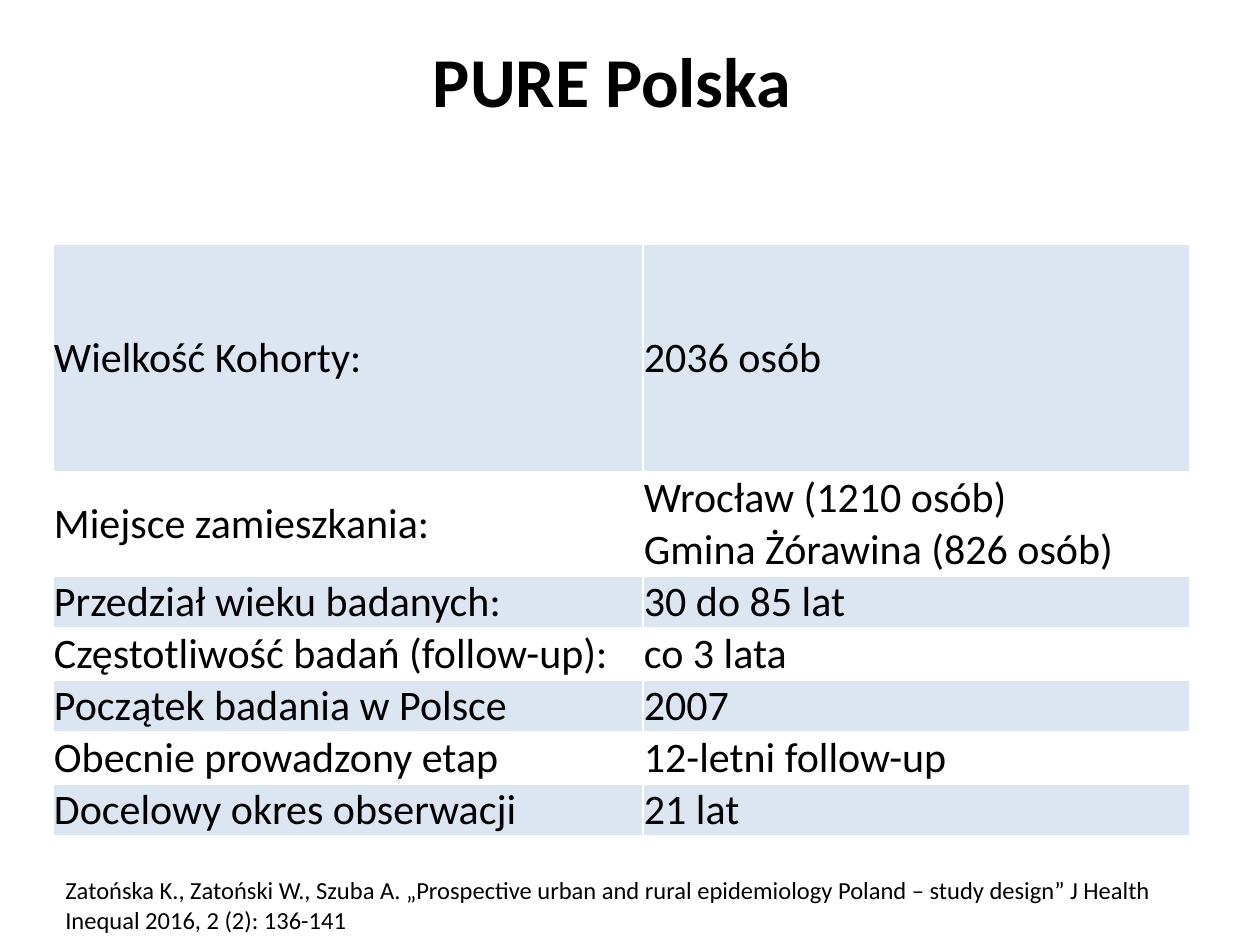
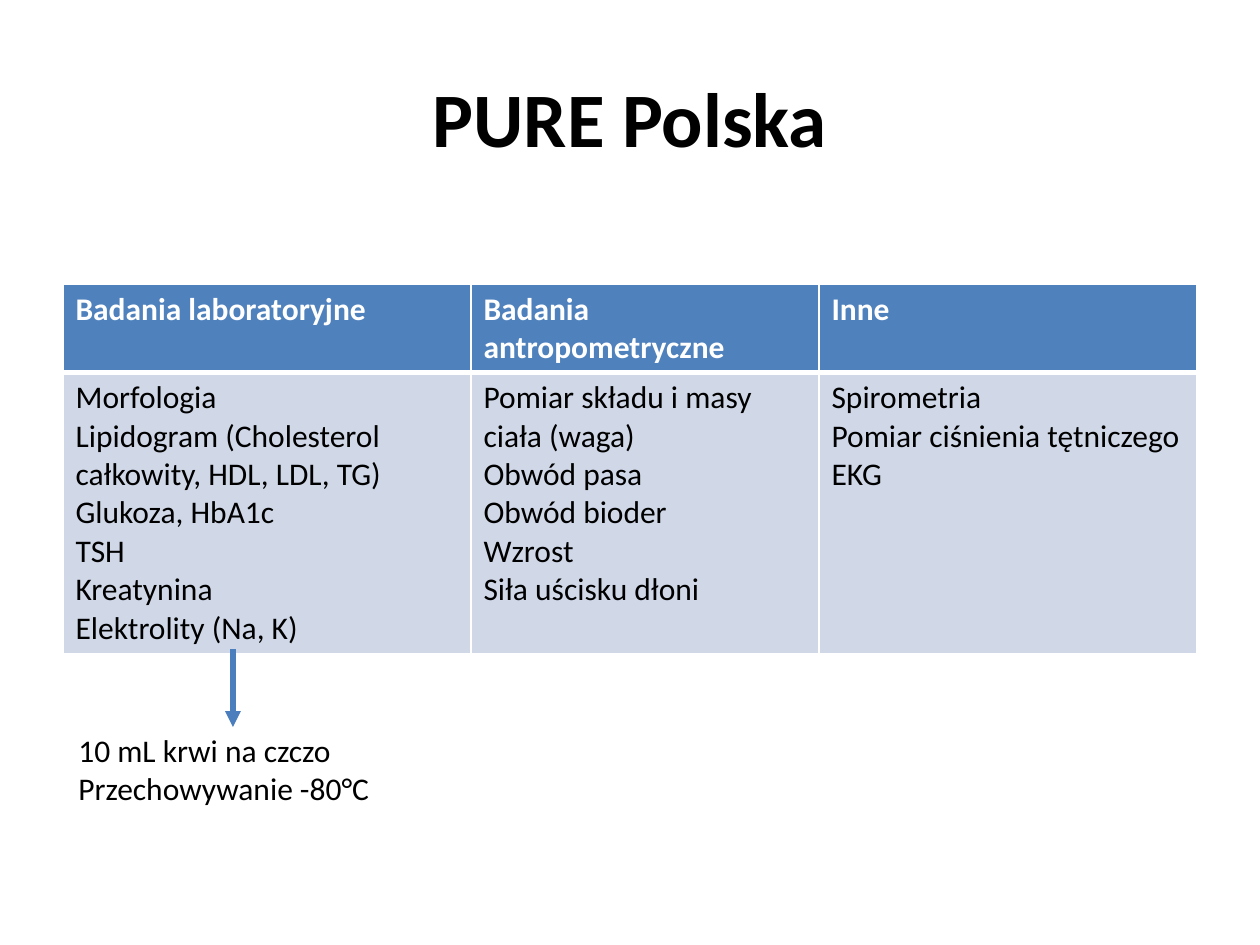
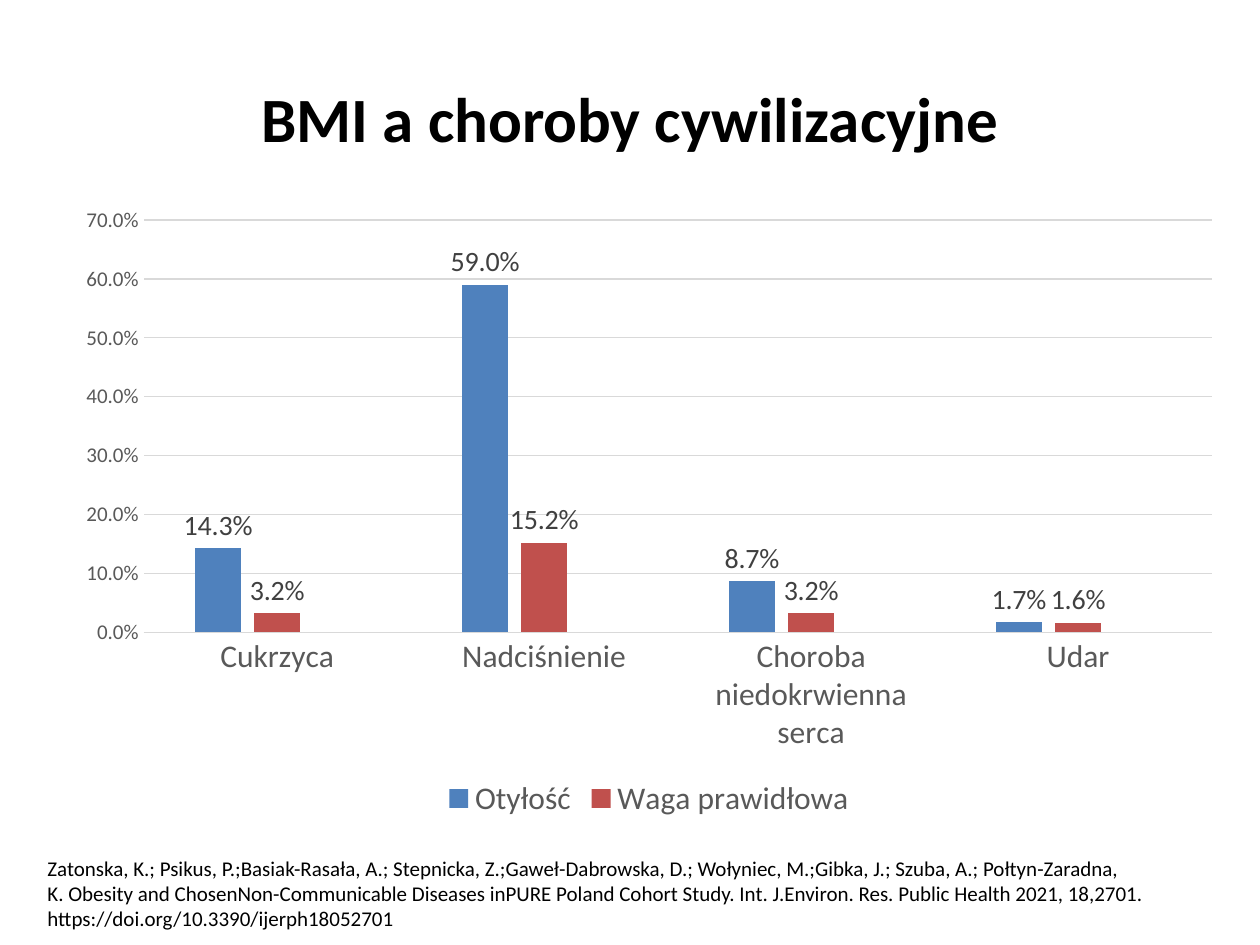
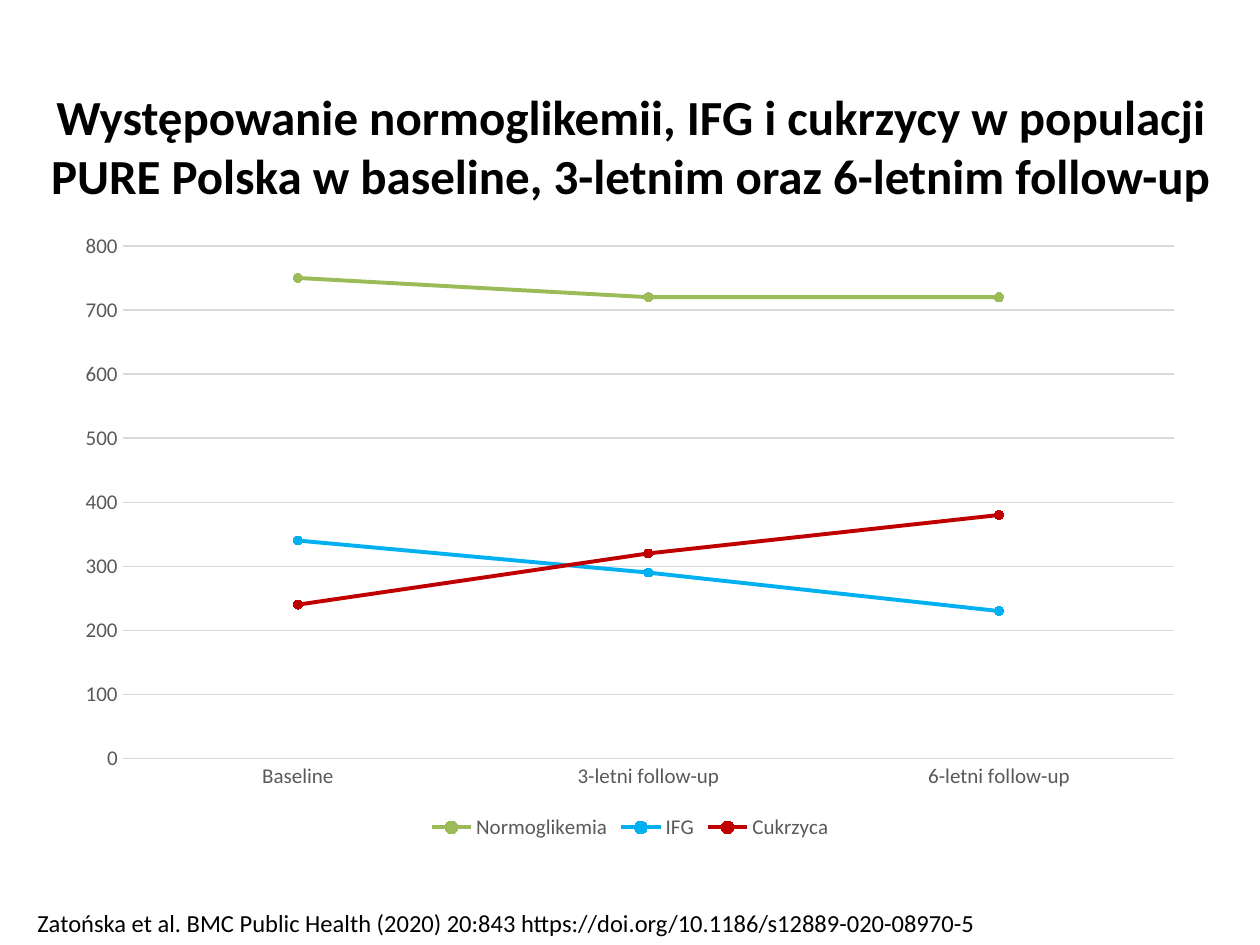
import lxml.etree
import pptx
import pptx.chart.data
import pptx.dml.color
import pptx.enum.chart
import pptx.enum.shapes
import pptx.enum.text
import pptx.oxml.ns
import pptx.util

FONT = "Calibri"
SLIDE_W, SLIDE_H = 1260, 945
C = {
    "text": "000000", "white": "FFFFFF", "band": "DCE6F2", "body": "D0D8E8",
    "blue": "4F81BD", "red": "C0504D", "green": "9BBB59", "arrow": "4B7EBC",
    "sky": "00B0F0", "crimson": "C00000",
    "axis": "595959", "label": "404040", "grid": "D9D9D9",
}
ALIGN = pptx.enum.text.PP_ALIGN
ANCHOR = pptx.enum.text.MSO_ANCHOR
CHART = pptx.enum.chart
SUB = lxml.etree.SubElement
qn = pptx.oxml.ns.qn


def px(n):
    return pptx.util.Emu(round(n * 914400 / 126))


def rgb(name):
    return pptx.dml.color.RGBColor.from_string(C[name])


def style_font(font, size, color, bold=False):
    font.name = FONT
    font.size = pptx.util.Pt(size)
    font.bold = bold
    font.color.rgb = rgb(color)


def write(tf, text, size=18, color="text", bold=False, align=ALIGN.LEFT):
    """Fill a text frame with one paragraph for each line of text."""
    for i, line in enumerate(text.split("\n")):
        p = tf.add_paragraph() if i else tf.paragraphs[0]
        p.alignment = align
        r = p.add_run()
        r.text = line
        style_font(r.font, size, color, bold)


def add_text(s, box, text, anchor=ANCHOR.TOP, grow=True, **fmt):
    tf = s.shapes.add_textbox(*map(px, box)).text_frame
    tf.word_wrap = True
    tf.vertical_anchor = anchor
    if grow:
        tf.auto_size = pptx.enum.text.MSO_AUTO_SIZE.SHAPE_TO_FIT_TEXT
    write(tf, text, **fmt)


def add_title(s, text, size, left=63, top=38, width=1134):
    add_text(s, (left, top, width, 158), text, anchor=ANCHOR.MIDDLE, grow=False,
             size=size, bold=True, align=ALIGN.CENTER)


def add_table(s, left, top, cols, rows):
    """Add an unstyled table with the given column widths and row heights."""
    tbl = s.shapes.add_table(len(rows), len(cols), px(left), px(top),
                             px(sum(cols)), px(sum(rows))).table
    tbl.first_row = tbl.horz_banding = False
    for col, width in zip(tbl.columns, cols):
        col.width = px(width)
    for row, height in zip(tbl.rows, rows):
        row.height = px(height)
    return tbl


def fill_cell(cell, text, fill, top=1, bottom=1, **fmt):
    """Write a cell with white borders; top and bottom are border points."""
    tc_pr = cell._tc.get_or_add_tcPr()
    for side, pt in zip("LRTB", (1, 1, top, bottom)):
        ln = SUB(tc_pr, qn(f"a:ln{side}"), w=str(pptx.util.Pt(pt)))
        SUB(SUB(ln, qn("a:solidFill")), qn("a:srgbClr"), val=C["white"])
    cell.fill.solid()
    cell.fill.fore_color.rgb = rgb(fill)
    write(cell.text_frame, text, **fmt)


def add_arrow(s, x1, y1, x2, y2):
    ends = map(px, (x1, y1, x2, y2))
    sp = s.shapes.add_connector(pptx.enum.shapes.MSO_CONNECTOR.STRAIGHT, *ends)
    sp.line.color.rgb = rgb("arrow")
    sp.line.width = pptx.util.Pt(3)
    SUB(sp.line._get_or_add_ln(), qn("a:tailEnd"), type="triangle")
    SUB(sp._element.spPr, qn("a:effectLst"))


def grey_line(line):
    line.color.rgb = rgb("grid")
    line.width = pptx.util.Pt(0.75)


def add_chart(s, kind, box, cats, series, top, step, cat_size, number_format="General"):
    data = pptx.chart.data.CategoryChartData(number_format=number_format)
    data.categories = cats
    for name, values in series:
        data.add_series(name, values)
    chart = s.shapes.add_chart(kind, *map(px, box), data).chart
    style_font(chart.font, 10, "text")
    chart.has_title = False
    chart.plots[0].vary_by_categories = False

    chart.has_legend = True
    chart.legend.position = CHART.XL_LEGEND_POSITION.BOTTOM
    chart.legend.include_in_layout = False
    style_font(chart.legend.font, cat_size, "axis")

    cat, val = chart.category_axis, chart.value_axis
    for axis, size in ((cat, cat_size), (val, 12)):
        axis.major_tick_mark = axis.minor_tick_mark = CHART.XL_TICK_MARK.NONE
        style_font(axis.tick_labels.font, size, "axis")
    grey_line(cat.format.line)
    val.format.line.fill.background()
    val.has_major_gridlines = True
    grey_line(val.major_gridlines.format.line)
    val.minimum_scale, val.maximum_scale, val.major_unit = 0, top, step
    val.tick_labels.number_format = number_format
    val.tick_labels.number_format_is_linked = False
    return chart


def hide_legend_entry(chart, idx):
    entry = lxml.etree.Element(qn("c:legendEntry"))
    SUB(entry, qn("c:idx"), val=str(idx))
    SUB(entry, qn("c:delete"), val="1")
    chart.legend._element.find(qn("c:legendPos")).addnext(entry)


def cohort_slide(s):
    add_title(s, "PURE Polska ", 40, left=53, top=0)
    rows = [
        ("Wielkość Kohorty:", "2036 osób", "band"),
        ("Miejsce zamieszkania:", "Wrocław (1210 osób)", "white"),
        ("", "Gmina Żórawina (826 osób)", "white"),
        ("Przedział wieku badanych:", "30 do 85 lat", "band"),
        ("Częstotliwość badań (follow-up):", "co 3 lata", "white"),
        ("Początek badania w Polsce", "2007", "band"),
        ("Obecnie prowadzony etap", "12-letni follow-up", "white"),
        ("Docelowy okres obserwacji", "21 lat", "band"),
    ]
    tbl = add_table(s, 53, 244, (590, 547), [228] + [52] * (len(rows) - 1))
    tbl.cell(1, 0).merge(tbl.cell(2, 0))
    for i, (*texts, fill) in enumerate(rows):
        for j, text in enumerate(texts):
            cell = tbl.cell(i, j)
            cell.margin_left = cell.margin_right = cell.margin_top = px(1)
            cell.margin_bottom = 0
            cell.vertical_anchor = ANCHOR.MIDDLE
            if not cell.is_spanned:
                fill_cell(cell, text, fill, size=24)
    add_text(s, (53, 869, 1172, 111),
             "Zatońska K., Zatoński W., Szuba A. „Prospective urban and rural "
             "epidemiology Poland – study design” J Health Inequal 2016, 2 (2): 136-141",
             size=14)


def examinations_slide(s):
    add_title(s, "PURE Polska", 44)
    columns = [
        ("Badania laboratoryjne",
         "Morfologia\nLipidogram (Cholesterol całkowity, HDL, LDL, TG)\n"
         "Glukoza, HbA1c\nTSH\nKreatynina\nElektrolity (Na, K)"),
        ("Badania antropometryczne",
         "Pomiar składu i masy ciała (waga)\nObwód pasa\nObwód bioder\n"
         "Wzrost\nSiła uścisku dłoni"),
        ("Inne", "Spirometria\nPomiar ciśnienia tętniczego\nEKG"),
    ]
    tbl = add_table(s, 63, 284, (408, 348, 378), (88, 282))
    for j, (head, body) in enumerate(columns):
        fill_cell(tbl.cell(0, j), head, "blue", bottom=3, color="white", bold=True)
        fill_cell(tbl.cell(1, j), body, "body", top=3)
    add_arrow(s, 233, 649, 233, 727)
    add_text(s, (66, 725, 378, 127), "10 mL krwi na czczo\nPrzechowywanie -80°C")


def bmi_slide(s):
    add_title(s, "BMI a choroby cywilizacyjne", 36)
    cats = ["Cukrzyca", "Nadciśnienie", "Choroba niedokrwienna serca", "Udar"]
    series = [
        ("Otyłość", (0.143, 0.59, 0.087, 0.017)),
        ("Waga prawidłowa", (0.032, 0.152, 0.032, 0.016)),
        ("Series 3", (None,) * len(cats)),
    ]
    chart = add_chart(s, CHART.XL_CHART_TYPE.COLUMN_CLUSTERED, (63, 195, 1172, 629),
                      cats, series, 0.7, 0.1, 18, "0.0%")
    hide_legend_entry(chart, 2)
    plot = chart.plots[0]
    plot.gap_width, plot.overlap = 219, -27
    for bars, color in zip(plot.series, ("blue", "red", "green")):
        bars.format.fill.solid()
        bars.format.fill.fore_color.rgb = rgb(color)
        labels = bars.data_labels
        labels.show_value = True
        labels.position = CHART.XL_LABEL_POSITION.OUTSIDE_END
        labels.number_format = "0.0%"
        labels.number_format_is_linked = False
        style_font(labels.font, 16, "label")
    add_text(s, (35, 849, 1191, 89),
             "Zatonska, K.; Psikus, P.;Basiak-Rasała, A.; Stepnicka, Z.;Gaweł-Dabrowska, D.; "
             "Wołyniec, M.;Gibka, J.; Szuba, A.; Połtyn-Zaradna,\n"
             "K. Obesity and ChosenNon-Communicable Diseases inPURE Poland Cohort Study. "
             "Int. J.Environ. Res. Public Health 2021, 18,2701. "
             "https://doi.org/10.3390/ijerph18052701", size=12)


def glycaemia_slide(s):
    add_title(s, "Występowanie normoglikemii, IFG i cukrzycy w populacji PURE Polska "
                 "w baseline, 3-letnim oraz 6-letnim follow-up",
              28, left=29, top=66, width=1203)
    cats = ["Baseline", "3-letni follow-up", "6-letni follow-up"]
    series = [
        ("Normoglikemia", (750, 720, 720)),
        ("IFG", (340, 290, 230)),
        ("Cukrzyca", (240, 320, 380)),
    ]
    chart = add_chart(s, CHART.XL_CHART_TYPE.LINE_MARKERS, (63, 221, 1134, 624),
                      cats, series, 800, 100, 12)
    for line, color in zip(chart.plots[0].series, ("green", "sky", "crimson")):
        line.smooth = False
        line.format.line.color.rgb = rgb(color)
        line.format.line.width = pptx.util.Pt(2.25)
        marker = line.marker
        marker.style = CHART.XL_MARKER_STYLE.CIRCLE
        marker.size = 5
        marker.format.fill.solid()
        marker.format.fill.fore_color.rgb = rgb(color)
        marker.format.line.color.rgb = rgb(color)
    add_text(s, (25, 902, 1211, 43),
             "Zatońska et al. BMC Public Health (2020) 20:843 "
             "https://doi.org/10.1186/s12889-020-08970-5", size=14)


def main():
    prs = pptx.Presentation()
    prs.slide_width, prs.slide_height = px(SLIDE_W), px(SLIDE_H)
    for build in (cohort_slide, examinations_slide, bmi_slide, glycaemia_slide):
        build(prs.slides.add_slide(prs.slide_layouts[6]))
    prs.save("out.pptx")


if __name__ == "__main__":
    main()
